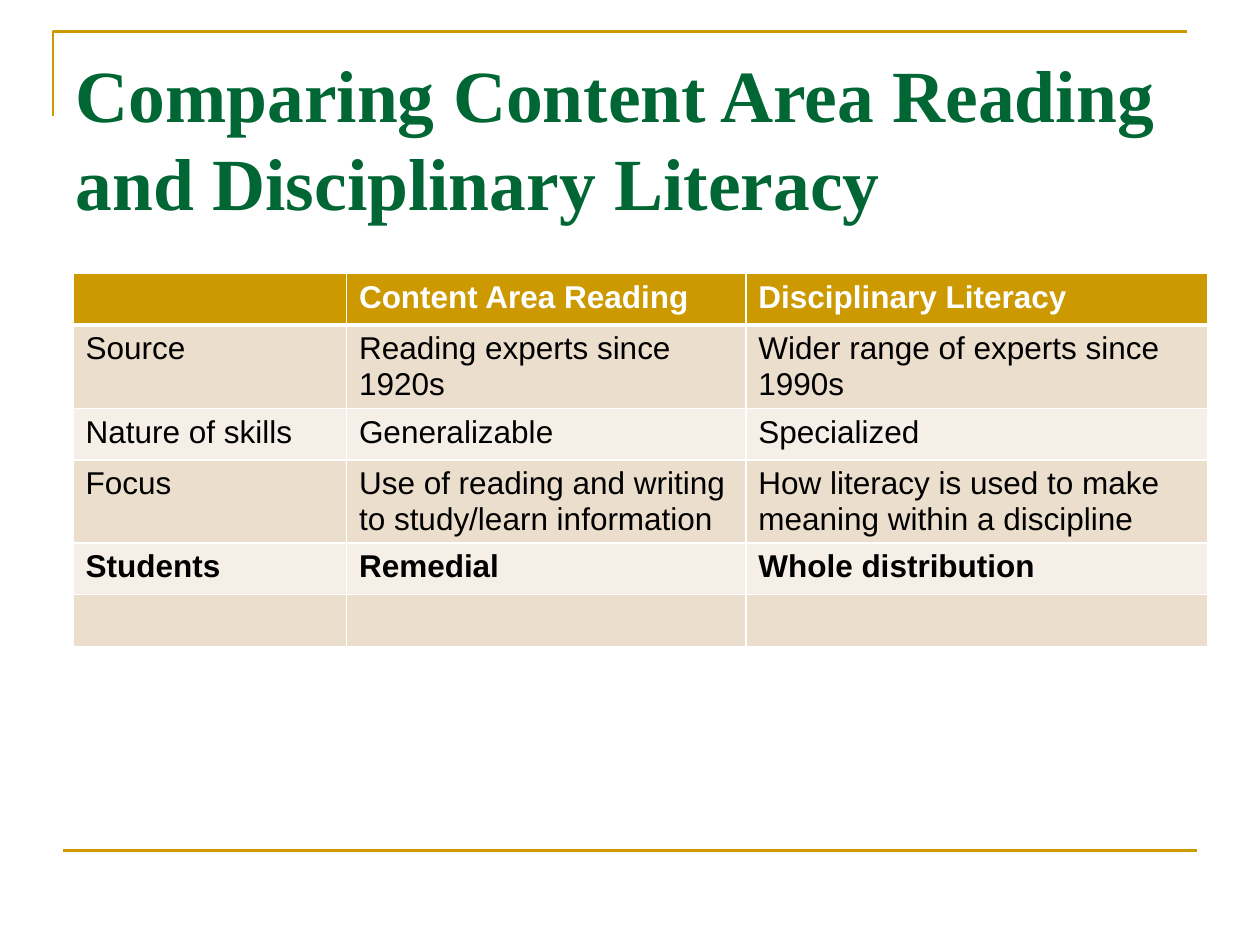
from lxml.etree import SubElement
from pptx import Presentation
from pptx.dml.color import RGBColor
from pptx.enum.shapes import MSO_CONNECTOR
from pptx.enum.text import MSO_ANCHOR, MSO_AUTO_SIZE, PP_ALIGN
from pptx.oxml.ns import qn
from pptx.util import Inches, Pt

GOLD, GREEN, WHITE, BLACK = "CC9900", "006633", "FFFFFF", "000000"
BANDS = ("ECDECC", "F6EFE7")
COL_WIDTHS = (2.17, 3.17, 3.67)
ROW_HEIGHT = 0.41
ROWS = (
    ("", "Content Area Reading", "Disciplinary Literacy"),
    ("Source", "Reading experts since 1920s", "Wider range of experts since 1990s"),
    ("Nature of skills", "Generalizable", "Specialized"),
    ("Focus", "Use of reading and writing to study/learn information",
     "How literacy is used to make meaning within a discipline"),
    ("Students", "Remedial", "Whole distribution"),
    ("", "", ""),
)
BOLD_ROWS = (0, 4)


def rgb(color):
    """Turn a hex string into a colour."""
    return RGBColor.from_string(color)


def set_all(obj, values):
    """Set attributes of an object from a dict."""
    for name, value in values.items():
        setattr(obj, name, value)


def format_font(font, color, **values):
    """Apply a colour and format values to a font."""
    set_all(font, values)
    font.color.rgb = rgb(color)


def format_line(sp):
    """Give a rule its gold line and no shadow."""
    sp.line.color.rgb = rgb(GOLD)
    sp.line.width = Pt(1.5)


def add_frame(slide, left, top, width, height):
    """Draw the open corner rule around the title."""
    x, y = Inches(left), Inches(top)
    builder = slide.shapes.build_freeform(x, y + Inches(height))
    builder.add_line_segments([(x, y), (x + Inches(width), y)], close=False)
    sp = builder.convert_to_shape()
    sp.fill.background()
    sp.shadow.inherit = False
    format_line(sp)


def add_footer_rule(slide, left, top, width):
    """Draw the horizontal rule at the foot of the slide."""
    sp = slide.shapes.add_connector(
        MSO_CONNECTOR.STRAIGHT, Inches(left), Inches(top),
        Inches(left + width), Inches(top))
    format_line(sp)
    SubElement(sp._element.spPr, qn("a:effectLst"))


def add_title(slide, left, top, width, height, text):
    """Place and format the title placeholder."""
    sp = slide.shapes.title
    set_all(sp, dict(left=Inches(left), top=Inches(top),
                     width=Inches(width), height=Inches(height)))
    tf = sp.text_frame
    tf.text = text
    set_all(tf, dict(word_wrap=True, auto_size=MSO_AUTO_SIZE.NONE,
                     vertical_anchor=MSO_ANCHOR.TOP, margin_top=Inches(0.09)))
    p = tf.paragraphs[0]
    set_all(p, dict(alignment=PP_ALIGN.LEFT, line_spacing=Pt(50.3)))
    format_font(p.runs[0].font, GREEN, name="Times New Roman", size=Pt(42), bold=True)


def set_borders(cell, bottom):
    """Give a cell white borders, with its own bottom width."""
    tc_pr = cell._tc.get_or_add_tcPr()
    widths = {"lnL": 1, "lnR": 1, "lnT": 1, "lnB": bottom}
    for index, (tag, width) in enumerate(widths.items()):
        ln = SubElement(tc_pr, qn(f"a:{tag}"), w=str(Pt(width)))
        fill = SubElement(ln, qn("a:solidFill"))
        SubElement(fill, qn("a:srgbClr"), val=WHITE)
        tc_pr.insert(index, ln)


def add_comparison(slide, left, top):
    """Build the comparison table from its rows."""
    table = slide.shapes.add_table(
        len(ROWS), len(COL_WIDTHS), Inches(left), Inches(top),
        Inches(sum(COL_WIDTHS)), Inches(ROW_HEIGHT * len(ROWS))).table
    for column, width in zip(table.columns, COL_WIDTHS):
        column.width = Inches(width)
    for r, texts in enumerate(ROWS):
        header = r == 0
        table.rows[r].height = Inches(ROW_HEIGHT)
        for c, text in enumerate(texts):
            cell = table.cell(r, c)
            cell.fill.solid()
            cell.fill.fore_color.rgb = rgb(GOLD if header else BANDS[(r - 1) % 2])
            set_borders(cell, 3 if header else 1)
            p = cell.text_frame.paragraphs[0]
            if text:
                p.add_run().text = text
                format_font(p.runs[0].font, WHITE if header else BLACK,
                            name="Arial", size=Pt(18), bold=r in BOLD_ROWS)


def main():
    """Build and save the slide."""
    prs = Presentation()
    set_all(prs, dict(slide_width=Inches(10), slide_height=Inches(7.5)))
    slide = prs.slides.add_slide(prs.slide_layouts[5])
    add_frame(slide, 0.42, 0.25, 9, 0.67)
    add_footer_rule(slide, 0.5, 6.75, 9)
    add_title(slide, 0.5, 0.3, 9, 1.25,
              "Comparing Content Area Reading and Disciplinary Literacy")
    add_comparison(slide, 0.58, 2.17)
    prs.save("out.pptx")


if __name__ == "__main__":
    main()
